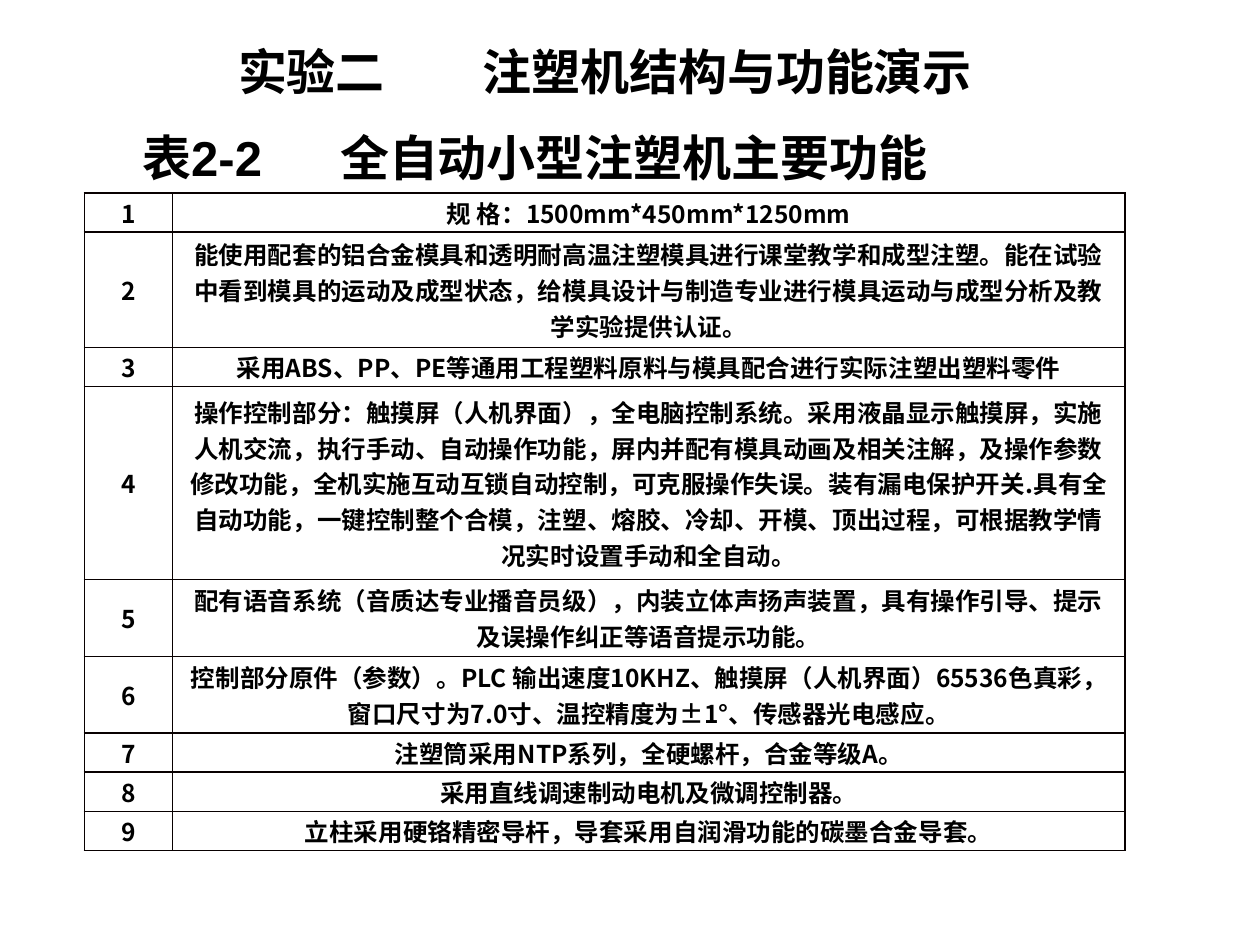
from dataclasses import dataclass

from lxml import etree
from pptx import Presentation
from pptx import slide as slides
from pptx import util as u
from pptx.dml.color import RGBColor
from pptx.enum import text
from pptx.oxml import ns

BLACK = RGBColor(0, 0, 0)
BORDER = RGBColor(8, 0, 0)
CJK_FONT = "Noto Sans CJK SC"
COLUMN_WIDTHS = (0.7, 7.56)
FUNCTIONS = (
    (0.31, "规 格：1500mm*450mm*1250mm"),
    (0.92, "能使用配套的铝合金模具和透明耐高温注塑模具进行课堂教学和成型注塑。"
           "能在试验中看到模具的运动及成型状态，给模具设计与制造专业进行模具运动与成型分析及教学实验提供认证。"),
    (0.31, "采用ABS、PP、PE等通用工程塑料原料与模具配合进行实际注塑出塑料零件"),
    (1.53, "操作控制部分：触摸屏（人机界面），全电脑控制系统。采用液晶显示触摸屏，实施人机交流，"
           "执行手动、自动操作功能，屏内并配有模具动画及相关注解，及操作参数修改功能，"
           "全机实施互动互锁自动控制，可克服操作失误。装有漏电保护开关.具有全自动功能，"
           "一键控制整个合模，注塑、熔胶、冷却、开模、顶出过程，可根据教学情况实时设置手动和全自动。"),
    (0.61, "配有语音系统（音质达专业播音员级），内装立体声扬声装置，具有操作引导、提示及误操作纠正等语音提示功能。"),
    (0.61, "控制部分原件（参数）。PLC 输出速度10KHZ、触摸屏（人机界面）65536色真彩，"
           "窗口尺寸为7.0寸、温控精度为±1°、传感器光电感应。"),
    (0.31, "注塑筒采用NTP系列，全硬螺杆，合金等级A。"),
    (0.31, "采用直线调速制动电机及微调控制器。"),
    (0.31, "立柱采用硬铬精密导杆，导套采用自润滑功能的碳墨合金导套。"),
)


@dataclass
class PageBuilder:
    """Hold the slide and its text style, and add titles and tables."""

    page: slides.Slide
    title_size: int = 28
    table_size: int = 14

    def add_span(self, para, words, size, font=CJK_FONT):
        span = para.add_run()
        span.text = words
        span.font.size = u.Pt(size)
        span.font.bold = True
        span.font.name = font
        span.font.color.rgb = BLACK
        etree.SubElement(span.font._element, ns.qn("a:ea"), typeface=CJK_FONT)

    def add_title(self, left, top, width, inset, tab, words, font=CJK_FONT):
        box = self.page.shapes.add_textbox(
            u.Inches(left), u.Inches(top), u.Inches(width), u.Inches(0.57))
        frame = box.text_frame
        frame.word_wrap = True
        frame.margin_left = u.Inches(inset)
        para = frame.paragraphs[0]
        stops = etree.SubElement(para._p.get_or_add_pPr(), ns.qn("a:tabLst"))
        etree.SubElement(stops, ns.qn("a:tab"), pos=str(u.Inches(tab)), algn="l")
        self.add_span(para, words, self.title_size, font)

    def add_borders(self, cell):
        properties = cell._tc.get_or_add_tcPr()
        for side in ("lnL", "lnR", "lnT", "lnB"):
            line = etree.SubElement(properties, ns.qn(f"a:{side}"), w=str(u.Pt(1)))
            fill = etree.SubElement(line, ns.qn("a:solidFill"))
            etree.SubElement(fill, ns.qn("a:srgbClr"), val=str(BORDER))

    def fill_cell(self, cell, words):
        cell.margin_left = cell.margin_right = u.Inches(0.08)
        cell.margin_top = cell.margin_bottom = 0
        cell.vertical_anchor = text.MSO_ANCHOR.MIDDLE
        self.add_borders(cell)
        cell.fill.background()
        para = cell.text_frame.paragraphs[0]
        para.alignment = text.PP_ALIGN.CENTER
        self.add_span(para, words, self.table_size)

    def add_numbered_table(self, left, top, widths, entries):
        height = sum(row_height for row_height, _ in entries)
        table = self.page.shapes.add_table(
            len(entries), len(widths), u.Inches(left), u.Inches(top),
            u.Inches(sum(widths)), u.Inches(height)).table
        table.first_row = table.horz_banding = False
        for column, width in zip(table.columns, widths):
            column.width = u.Inches(width)
        for index, (row_height, words) in enumerate(entries):
            table.rows[index].height = u.Inches(row_height)
            self.fill_cell(table.cell(index, 0), str(index + 1))
            self.fill_cell(table.cell(index, 1), words)


def main():
    deck = Presentation()
    deck.slide_width, deck.slide_height = u.Inches(10), u.Inches(7.5)
    builder = PageBuilder(deck.slides.add_slide(deck.slide_layouts[6]))
    builder.add_title(1.38, 0.28, 6.74, 0.51, 1.94, "实验二\t注塑机结构与功能演示")
    builder.add_title(0.83, 0.96, 6.83, 0.3, 1.57, "表2-2\t全自动小型注塑机主要功能", "Arial")
    builder.add_numbered_table(0.67, 1.53, COLUMN_WIDTHS, FUNCTIONS)
    deck.save("out.pptx")


if __name__ == "__main__":
    main()
